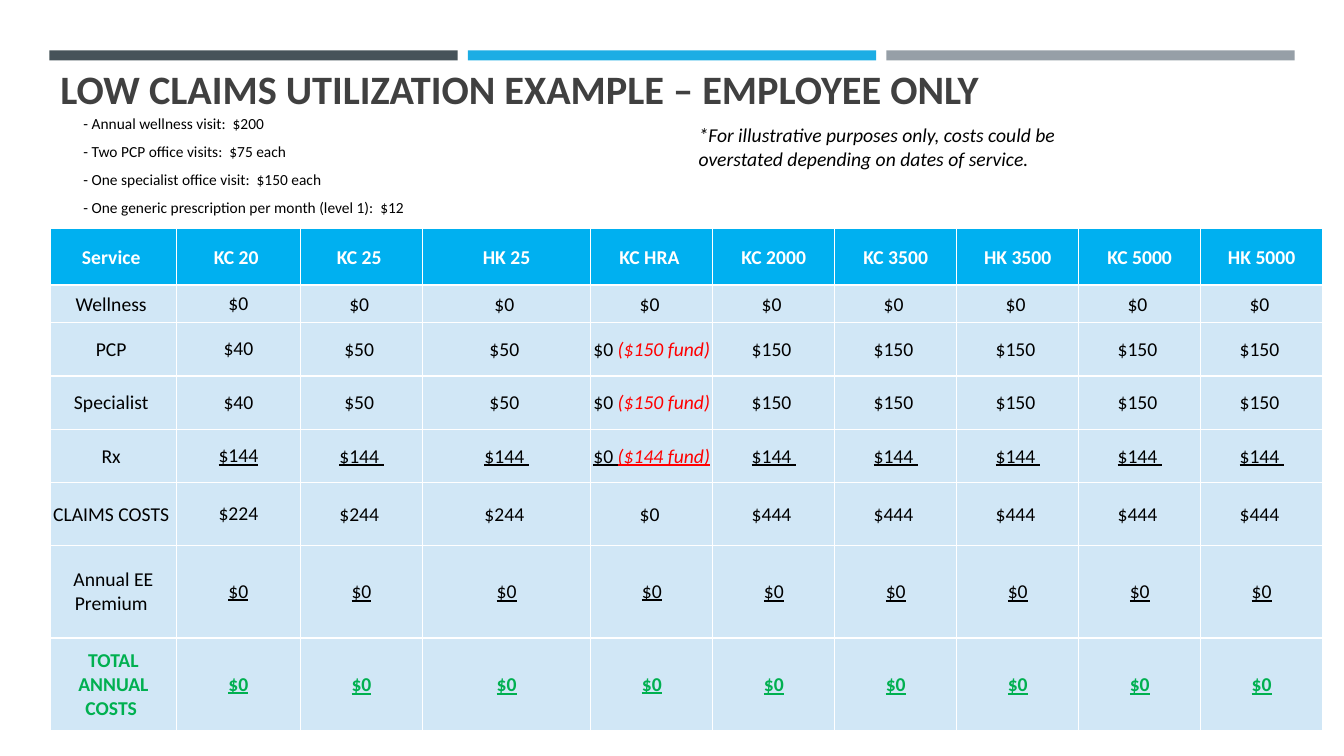
from pptx import Presentation
from pptx.dml.color import RGBColor
from pptx.enum.shapes import MSO_SHAPE
from pptx.enum.text import MSO_ANCHOR, PP_ALIGN
from pptx.oxml import parse_xml
from pptx.oxml.ns import nsdecls
from pptx.util import Inches, Pt

RECT = MSO_SHAPE.RECTANGLE
TOP, MIDDLE, BOTTOM = MSO_ANCHOR.TOP, MSO_ANCHOR.MIDDLE, MSO_ANCHOR.BOTTOM
CENTER = PP_ALIGN.CENTER


def color(text):
    return RGBColor.from_string(text)


def style(font, size, tint, bold=False, italic=False, under=False):
    font.name = "Calibri"
    font.size = Pt(size)
    font.color.rgb = color(tint)
    font.bold = bold
    font.italic = italic
    font.underline = under


deck = Presentation()
deck.slide_width = Inches(13.33)
deck.slide_height = Inches(7.5)
slide = deck.slides.add_slide(deck.slide_layouts[6])
shapes = slide.shapes

for i, tint in enumerate(["465359", "1CADE4", "969FA7"]):
    bar = shapes.add_shape(RECT, Inches(0.49 + 4.15 * i), Inches(0.5), Inches(4.05), Inches(0.1))
    bar.shadow.inherit = False
    bar.fill.solid()
    bar.fill.fore_color.rgb = color(tint)
    bar.line.fill.background()

title = "LOW CLAIMS UTILIZATION EXAMPLE – EMPLOYEE ONLY"
visits = """- Annual wellness visit:  $200
- Two PCP office visits:  $75 each
- One specialist office visit:  $150 each
- One generic prescription per month (level 1):  $12"""
note = "*For illustrative purposes only, costs could be overstated depending on dates of service."
boxes = [
    (title, 0.5, 0.53, 9.5, 0.64, BOTTOM, 28.8, "404040", True, False),
    (visits, 0.73, 1.1, 6, 1.12, TOP, 11, "000000", False, False),
    (note, 6.83, 1.17, 3.83, 0.57, TOP, 14, "000000", False, True),
]
for text, left, top, width, height, anchor, size, tint, bold, italic in boxes:
    box = shapes.add_textbox(Inches(left), Inches(top), Inches(width), Inches(height))
    frame = box.text_frame
    frame.word_wrap = True
    frame.vertical_anchor = anchor
    frame.text = text
    for i, para in enumerate(frame.paragraphs):
        style(para.font, size, tint, bold, italic)
        if text == visits:
            para.line_spacing = 0.9
            para.space_before = Pt(2.2 if i else 0)
            para.space_after = Pt(6)

heads = ["Service ", "KC 20 ", "KC 25 ", "HK 25", "KC HRA ",
         "KC 2000", "KC 3500", "HK 3500", "KC 5000", "HK 5000"]
costs = [
    ("Wellness ", "$0", "$0 ", "$0 ", "$0 "),
    ("PCP ", "$40", "$50 ", "$0 |($150 fund) ", "$150 "),
    ("Specialist ", "$40", "$50 ", "$0 |($150 fund) ", "$150 "),
    ("Rx ", "$144", "$144 ", "$0 |($144 fund) ", "$144 "),
    ("CLAIMS COSTS ", "$224", "$244 ", "$0 ", "$444 "),
    ("Annual EE Premium ", "$0", "$0", "$0", "$0"),
    ("TOTAL ANNUAL COSTS ", "$0", "$0", "$0", "$0"),
]
rows = [heads] + [[name, low, mid, mid, fund] + [high] * 5 for name, low, mid, fund, high in costs]
widths = [1.25, 1.23, 1.21, 1.67] + [1.21] * 6
heights = [0.56, 0.37, 0.53, 0.53, 0.53, 0.62, 0.92, 0.92]
grid = shapes.add_table(len(rows), len(heads), Inches(0.5), Inches(2.27),
                        Inches(sum(widths)), Inches(sum(heights))).table
for col, width in zip(grid.columns, widths):
    col.width = Inches(width)
for row, height in zip(grid.rows, heights):
    row.height = Inches(height)

for r, row in enumerate(rows):
    for c, text in enumerate(row):
        cell = grid.cell(r, c)
        props = cell._tc.get_or_add_tcPr()
        for side in "LRTB":
            thick = (r, side) in [(0, "B"), (1, "T")]
            props.append(parse_xml(
                f'<a:ln{side} {nsdecls("a")} w="{19050 if thick else 12700}"><a:solidFill>'
                f'<a:srgbClr val="FFFFFF"/></a:solidFill></a:ln{side}>'))
        cell.fill.solid()
        cell.fill.fore_color.rgb = color("D1E7F6" if r else "00B0F0")
        cell.vertical_anchor = MIDDLE
        roomy = r > 0 and c == 1 or r > 5 and c == 4
        cell.margin_left = cell.margin_right = Inches(0.1 if roomy else 0.01)
        cell.margin_top = Inches(0.05 if roomy else 0.01)
        cell.margin_bottom = Inches(0.05 if roomy else 0)
        para = cell.text_frame.paragraphs[0]
        para.alignment = CENTER
        tint = {0: "FFFFFF", 7: "00B050"}.get(r, "000000")
        for i, part in enumerate(text.split("|")):
            run = para.add_run()
            run.text = part
            style(run.font, 14, "FF0000" if i else tint, r in (0, 7), i > 0, c > 0 and r in (4, 6, 7))

deck.save("out.pptx")
